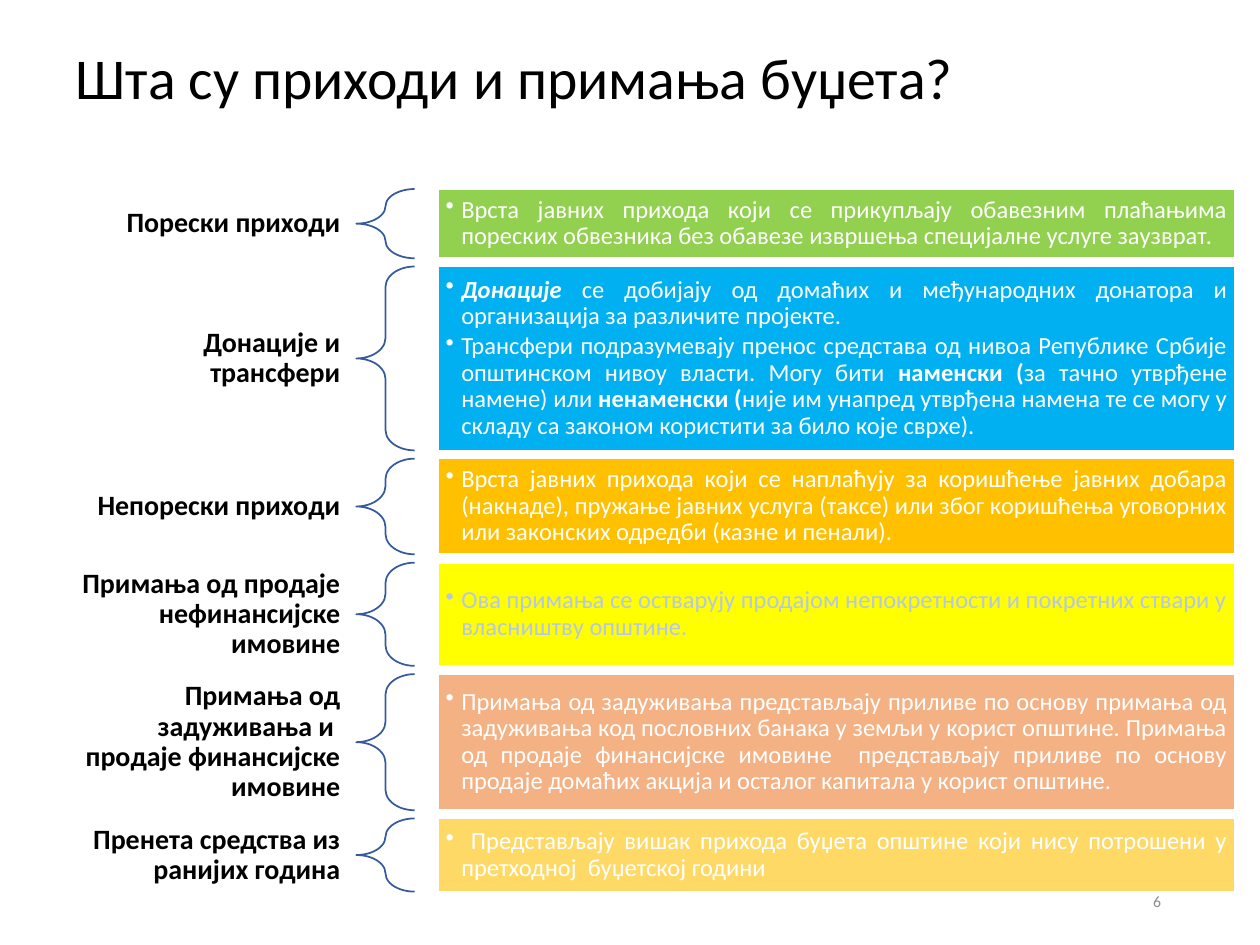
from lxml.etree import SubElement
from pptx import Presentation
from pptx.dml.color import RGBColor
from pptx.enum.shapes import MSO_SHAPE
from pptx.enum.text import MSO_ANCHOR, PP_ALIGN
from pptx.oxml.ns import qn
from pptx.util import Pt

COLORS = {
    "black": "000000", "white": "FFFFFF", "brace": "365B9D", "number": "8C8C8C",
    "green": "92D050", "blue": "00B0F0", "amber": "FFC000", "yellow": "FFFF00",
    "peach": "F4B183", "sand": "FFD966", "pale": "B4C7E7",
}
ROW_TOP, ROW_GAP = 108, 4.7
LABEL_LEFT, LABEL_WIDTH = 36, 167.4
BRACE_LEFT, BRACE_WIDTH = 203.6, 33.4
PANEL_LEFT, PANEL_WIDTH = 250.4, 455.2

REVENUES = [
    ("Порески приходи", 25.2, 39.6, "green", "white", [
        [("Врста јавних прихода који се прикупљају обавезним плаћањима пореских "
          "обвезника без обавезе извршења специјалне услуге заузврат.", "")]]),
    ("Донације и трансфери", 41.8, 105.1, "blue", "white", [
        [("Донације ", "bi"),
         ("се добијају од домаћих и међународних донатора и организација "
          "за различите пројекте. ", "")],
        [("Трансфери подразумевају пренос средстава од нивоа Републике Србије "
          "општинском нивоу власти. Могу бити ", ""),
         ("наменски (", "b"),
         ("за тачно утврђене намене) или ", ""),
         ("ненаменски (", "b"),
         ("није им унапред утврђена намена те се могу у складу са законом "
          "користити за било које сврхе).", "")]]),
    ("Непорески приходи", 25.2, 54.7, "amber", "white", [
        [("Врста јавних прихода који се наплаћују за коришћење јавних добара "
          "(накнаде), пружање јавних услуга (таксе) или због коришћења уговорних "
          "или законских одредби (казне и пенали).", "")]]),
    ("Примања од продаје нефинансијске имовине", 59, 59, "yellow", "pale", [
        [("Ова примања се остварују продајом непокретности и покретних ствари "
          "у власништву општине.", "")]]),
    ("Примања од задуживања и  продаје финансијске имовине", 77.8, 77.8, "peach", "white", [
        [("Примања од задуживања представљају приливе по основу примања од "
          "задуживања код пословних банака у земљи у корист општине. Примања од "
          "продаје финансијске имовине  представљају приливе по основу продаје "
          "домаћих акција и осталог капитала у корист општине.", "")]]),
    ("Пренета средства из ранијих година", 41.8, 41.8, "sand", "white", [
        [(" Представљају вишак прихода буџета општине који нису потрошени у "
          "претходној  буџетској години", "")]]),
]


def set_frame(frame, side, edge):
    frame.word_wrap = True
    frame.vertical_anchor = MSO_ANCHOR.MIDDLE
    frame.margin_left = frame.margin_right = Pt(side)
    frame.margin_top = frame.margin_bottom = Pt(edge)


def style(paragraph, size, color, align, spacing=0.9):
    paragraph.alignment = align
    paragraph.line_spacing = spacing
    paragraph.font.size = Pt(size)
    paragraph.font.name = "Calibri"
    paragraph.font.color.rgb = RGBColor.from_string(COLORS[color])


prs = Presentation()
prs.slide_width, prs.slide_height = Pt(720), Pt(540)
slide = prs.slides.add_slide(prs.slide_layouts[5])
shapes = slide.shapes

title = shapes.title
title.left, title.top, title.width, title.height = Pt(36), Pt(21.6), Pt(648), Pt(49)
title.text_frame.text = "Шта су приходи и примања буџета?"
set_frame(title.text_frame, 7.2, 3.6)
style(title.text_frame.paragraphs[0], 33, "black", PP_ALIGN.LEFT)

top = ROW_TOP
for name, label_height, height, fill, ink, points in REVENUES:
    label = shapes.add_textbox(Pt(LABEL_LEFT), Pt(top + (height - label_height) / 2),
                               Pt(LABEL_WIDTH), Pt(label_height))
    set_frame(label.text_frame, 8.96, 3.2)
    label.text_frame.text = name
    heading = label.text_frame.paragraphs[0]
    style(heading, 16, "black", PP_ALIGN.RIGHT)
    heading.font.bold = True

    brace = shapes.add_shape(MSO_SHAPE.LEFT_BRACE, Pt(BRACE_LEFT), Pt(top),
                             Pt(BRACE_WIDTH), Pt(height))
    brace.shadow.inherit = False
    brace.adjustments[0], brace.adjustments[1] = 0.35, 0.5
    brace.fill.background()
    brace.line.color.rgb = RGBColor.from_string(COLORS["brace"])
    brace.line.width = Pt(1)

    panel = shapes.add_shape(MSO_SHAPE.RECTANGLE, Pt(PANEL_LEFT), Pt(top),
                             Pt(PANEL_WIDTH), Pt(height))
    panel.shadow.inherit = False
    panel.fill.solid()
    panel.fill.fore_color.rgb = RGBColor.from_string(COLORS[fill])
    panel.line.color.rgb = RGBColor.from_string(COLORS["white"])
    panel.line.width = Pt(1)
    set_frame(panel.text_frame, 4.2, 4.2)
    for index, runs in enumerate(points):
        point = panel.text_frame.paragraphs[0] if index == 0 else panel.text_frame.add_paragraph()
        style(point, 14, ink, PP_ALIGN.JUSTIFY)
        point.level = 1
        point.space_after = Pt(2.1)
        properties = point._p.get_or_add_pPr()
        properties.set("marL", str(Pt(9)))
        properties.set("indent", str(Pt(-9)))
        bullet = SubElement(properties, qn("a:buChar"), char="•")
        properties.find(qn("a:defRPr")).addprevious(bullet)
        for text, emphasis in runs:
            run = point.add_run()
            run.text = text
            if "b" in emphasis:
                run.font.bold = True
            if "i" in emphasis:
                run.font.italic = True
    top += height + ROW_GAP

number = shapes.add_textbox(Pt(508.5), Pt(500.5), Pt(162), Pt(28.75))
set_frame(number.text_frame, 7.2, 3.6)
number.text_frame.text = "6"
style(number.text_frame.paragraphs[0], 9, "number", PP_ALIGN.RIGHT, 1.0)

prs.save("out.pptx")
